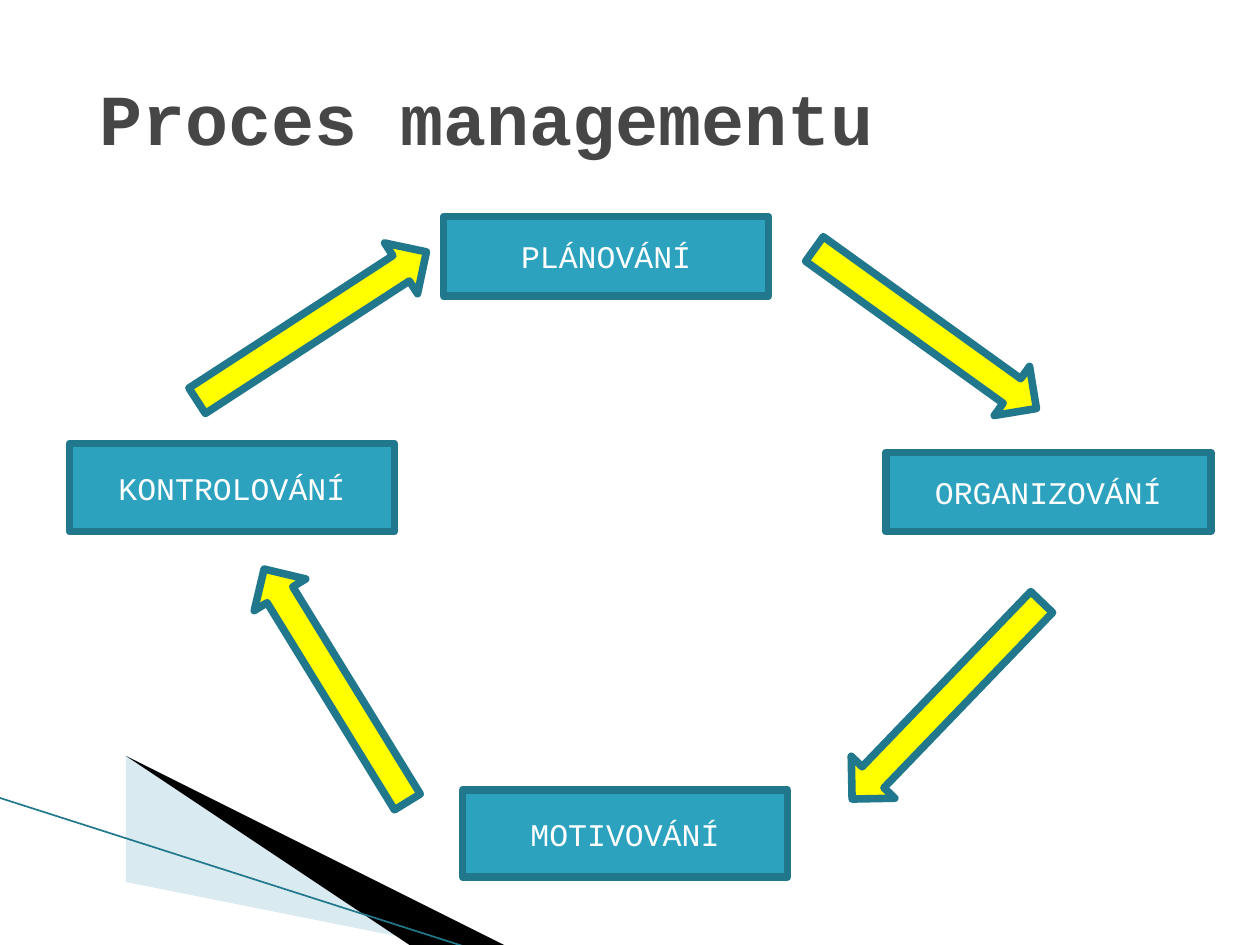
from lxml import etree
from pptx import Presentation
from pptx.dml.color import RGBColor
from pptx.enum.shapes import MSO_CONNECTOR, MSO_SHAPE
from pptx.enum.text import MSO_ANCHOR, PP_ALIGN
from pptx.oxml.ns import qn
from pptx.util import Inches, Pt

RECTANGLE = MSO_SHAPE.RECTANGLE
RIGHT_ARROW = MSO_SHAPE.RIGHT_ARROW
STRAIGHT = MSO_CONNECTOR.STRAIGHT
MIDDLE = MSO_ANCHOR.MIDDLE
CENTER = PP_ALIGN.CENTER

PALE_BLUE = RGBColor(0xA0, 0xCB, 0xDC)
BLACK = RGBColor(0, 0, 0)
WHITE = RGBColor(0xFF, 0xFF, 0xFF)
GRAY = RGBColor(0x46, 0x46, 0x46)
TEAL = RGBColor(0x2D, 0xA2, 0xBF)
DARK_TEAL = RGBColor(0x21, 0x78, 0x8D)
YELLOW = RGBColor(0xFF, 0xFF, 0)

FONT = "Courier New"
TITLE = "Proces managementu"
STEP_WIDTH = 2.58
STEPS = [
    ("PLÁNOVÁNÍ", 3.52, 1.72, 0.63),
    ("KONTROLOVÁNÍ", 0.55, 3.52, 0.7),
    ("ORGANIZOVÁNÍ", 7.03, 3.59, 0.63),
    ("MOTIVOVÁNÍ", 3.67, 6.27, 0.69),
]
ARROW_SIZE = (2.17, 0.48)
ARROWS = [
    (6.26, 2.37, 35.7),
    (6.43, 5.32, 133.9),
    (1.58, 5.2, 238.4),
    (1.39, 2.35, 327),
]
WEDGES = [
    (PALE_BLUE, 40, [(0.55, 6.51), (5.95, 7.51), (4.56, 7.51), (0.55, 6.5)]),
    (BLACK, 100, [(0.53, 6.49), (4.57, 7.51), (3.72, 7.52), (0.54, 6.5)]),
]
EDGE = [(-0.01, 6.33), (3.71, 7.52)]


def style_text(frame, text, size, color, bold=False):
    frame.word_wrap = True
    frame.vertical_anchor = MIDDLE
    frame.text = text
    font = frame.paragraphs[0].runs[0].font
    font.name = FONT
    font.size = Pt(size)
    font.bold = bold
    font.color.rgb = color


def add_wedge(slide, color, opacity, points):
    builder = slide.shapes.build_freeform(*points[0], scale=Inches(1))
    builder.add_line_segments(points[1:], close=True)
    wedge = builder.convert_to_shape()
    wedge.shadow.inherit = False
    wedge.fill.solid()
    wedge.fill.fore_color.rgb = color
    wedge.line.fill.background()
    if opacity < 100:
        fill_color = wedge.fill._xPr.find(qn("a:solidFill"))[0]
        etree.SubElement(fill_color, qn("a:alpha"), val=str(opacity * 1000))


def add_outlined(slide, kind, box, color):
    shape = slide.shapes.add_shape(kind, *map(Inches, box))
    shape.shadow.inherit = False
    shape.fill.solid()
    shape.fill.fore_color.rgb = color
    shape.line.color.rgb = DARK_TEAL
    shape.line.width = Pt(4.33)
    return shape


def main():
    deck = Presentation()
    deck.slide_width, deck.slide_height = Inches(10), Inches(7.5)
    slide = deck.slides.add_slide(deck.slide_layouts[6])

    for wedge in WEDGES:
        add_wedge(slide, *wedge)
    start, end = EDGE
    edge = slide.shapes.add_connector(STRAIGHT, *map(Inches, start + end))
    edge.line.color.rgb = DARK_TEAL
    edge.line.width = Pt(0.95)
    etree.SubElement(edge._element.spPr, qn("a:effectLst"))

    title = slide.shapes.add_textbox(*map(Inches, (0.69, 0.3, 9, 1.25)))
    style_text(title.text_frame, TITLE, 41, GRAY, bold=True)

    for name, left, top, height in STEPS:
        step = add_outlined(slide, RECTANGLE, (left, top, STEP_WIDTH, height), TEAL)
        style_text(step.text_frame, name, 18, WHITE)
        step.text_frame.paragraphs[0].alignment = CENTER

    for left, top, angle in ARROWS:
        arrow = add_outlined(slide, RIGHT_ARROW, (left, top, *ARROW_SIZE), YELLOW)
        arrow.rotation = angle

    deck.save("out.pptx")


if __name__ == "__main__":
    main()
